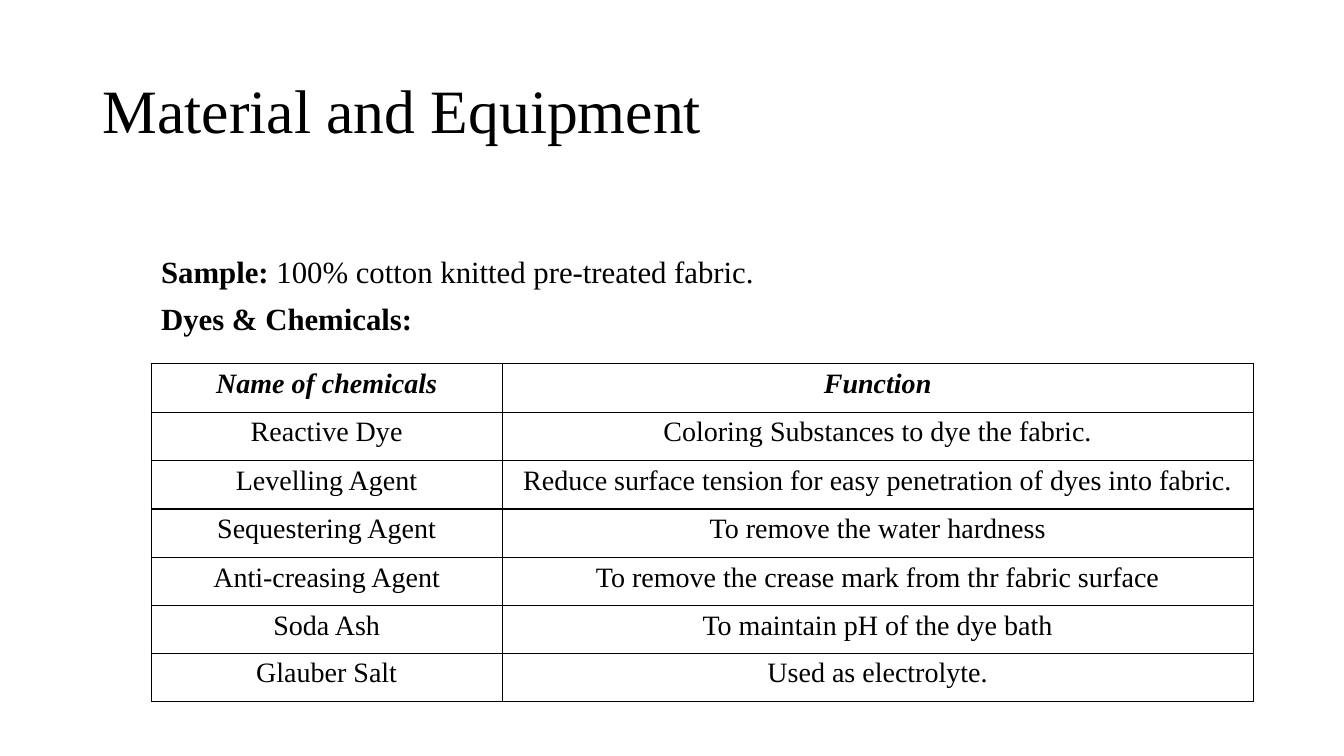
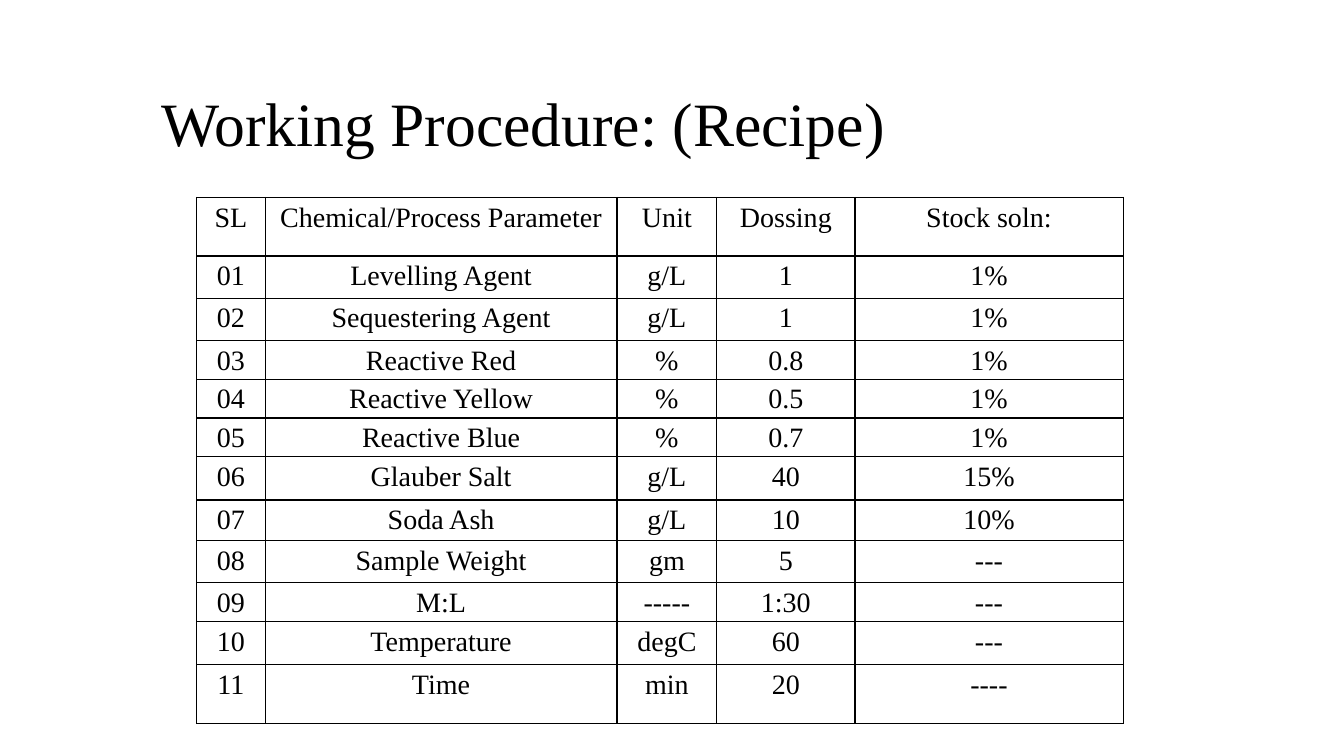
from dataclasses import dataclass

from lxml.etree import SubElement
from pptx import Presentation
from pptx.dml.color import RGBColor
from pptx.enum.text import MSO_ANCHOR, PP_ALIGN
from pptx.oxml.ns import qn
from pptx.util import Inches, Pt


@dataclass(frozen=True)
class Theme:
    font: str = "Times New Roman"
    ink: str = "000000"
    paper: str = "FFFFFF"
    title: int = 44
    body: int = 22
    cell: int = 20
    rule: int = 1
    tight: float = 0.9
    loose: float = 1.15
    pad: float = 0.07


THEME = Theme()

CHEMICALS = [
    ("Name of chemicals", "Function"),
    ("Reactive Dye", "Coloring Substances to dye the fabric."),
    ("Levelling Agent",
     "Reduce surface tension for easy penetration of dyes into fabric."),
    ("Sequestering Agent", "To remove the water hardness"),
    ("Anti-creasing Agent",
     "To remove the crease mark from thr fabric surface"),
    ("Soda Ash", "To maintain pH of the dye bath"),
    ("Glauber Salt", "Used as electrolyte."),
]

HEADS = ("SL", "Chemical/Process Parameter", "Unit", "Dossing", "Stock soln:")
RECIPE = [
    ("Levelling Agent", "g/L", "1", "1%"),
    ("Sequestering Agent", "g/L", "1", "1%"),
    ("Reactive Red", "%", "0.8", "1%"),
    ("Reactive Yellow", "%", "0.5", "1%"),
    ("Reactive Blue", "%", "0.7", "1%"),
    ("Glauber Salt", "g/L", "40", "15%"),
    ("Soda Ash", "g/L", "10", "10%"),
    ("Sample Weight", "gm", "5", "---"),
    ("M:L", "-----", "1:30", "---"),
    ("Temperature", "degC", "60", "---"),
    ("Time", "min", "20", "----"),
]


def write(para, text, size=THEME.body, bold=False, italic=False,
          align=PP_ALIGN.LEFT, line=THEME.tight, before=0):
    """Add one run of text to a paragraph and set its format."""
    para.alignment = align
    para.line_spacing = line
    para.space_before = Pt(before)
    run = para.add_run()
    run.text = text
    font = run.font
    font.name, font.size = THEME.font, Pt(size)
    font.bold, font.italic = bold, italic
    font.color.rgb = RGBColor.from_string(THEME.ink)


def add_frame(slide, box, anchor=MSO_ANCHOR.TOP):
    frame = slide.shapes.add_textbox(*map(Inches, box)).text_frame
    frame.word_wrap = True
    frame.vertical_anchor = anchor
    return frame


def add_title(slide, box, text):
    frame = add_frame(slide, box, MSO_ANCHOR.MIDDLE)
    write(frame.paragraphs[0], text, size=THEME.title)


def add_notes(slide, box, notes):
    """Place lines made of a bold label and plain text."""
    frame = add_frame(slide, box)
    for i, (label, text) in enumerate(notes):
        para = frame.add_paragraph() if i else frame.paragraphs[0]
        write(para, label, bold=True, before=10)
        if text:
            write(para, text, before=10)


def rule_cell(cell):
    """Draw the four borders, which must come before the cell's fill."""
    props = cell._tc.get_or_add_tcPr()
    for side in ("lnL", "lnR", "lnT", "lnB"):
        edge = SubElement(props, qn(f"a:{side}"), w=str(Pt(THEME.rule)))
        fill = SubElement(edge, qn("a:solidFill"))
        SubElement(fill, qn("a:srgbClr"), val=THEME.ink)


def add_grid(slide, left, top, cols, rows, data, strong=False):
    """Place a ruled table; strong sets the head row in bold italic."""
    box = left, top, sum(cols), sum(rows)
    table = slide.shapes.add_table(
        len(rows), len(cols), *map(Inches, box)).table
    table.first_row = table.horz_banding = False
    for col, width in zip(table.columns, cols):
        col.width = Inches(width)
    for r, (row, height, texts) in enumerate(zip(table.rows, rows, data)):
        row.height = Inches(height)
        head = strong and r == 0
        for cell, text in zip(row.cells, texts):
            cell.margin_left = cell.margin_right = Inches(THEME.pad)
            cell.margin_top = cell.margin_bottom = 0
            rule_cell(cell)
            cell.fill.background()
            write(cell.text_frame.paragraphs[0], text, size=THEME.cell,
                  bold=head, italic=head, align=PP_ALIGN.CENTER,
                  line=THEME.loose)


def add_slide(deck):
    slide = deck.slides.add_slide(deck.slide_layouts[6])
    fill = slide.background.fill
    fill.solid()
    fill.fore_color.rgb = RGBColor.from_string(THEME.paper)
    return slide


def add_supplies(deck):
    slide = add_slide(deck)
    add_title(slide, (0.92, 0.4, 11.5, 1.45), "Material and Equipment")
    add_notes(slide, (1.5, 2.5, 10.5, 1), [
        ("Sample:", " 100% cotton knitted pre-treated fabric."),
        ("Dyes & Chemicals:", ""),
    ])
    rows = [0.48] * 5 + [0.47, 0.48]
    add_grid(slide, 1.5, 3.61, (3.48, 7.45), rows, CHEMICALS, strong=True)


def add_recipe(deck):
    slide = add_slide(deck)
    add_title(slide, (1.5, 0.75, 10.5, 1.02), "Working Procedure: (Recipe)")
    cols = 0.68, 3.49, 0.99, 1.37, 2.66
    rows = (0.58, 0.42, 0.42, 0.36, 0.36, 0.36,
            0.43, 0.4, 0.42, 0.37, 0.43, 0.58)
    steps = [(f"{n:02}", *step) for n, step in enumerate(RECIPE, 1)]
    add_grid(slide, 1.95, 1.96, cols, rows, [HEADS, *steps])


def main():
    deck = Presentation()
    deck.slide_width, deck.slide_height = Inches(13.33), Inches(7.5)
    add_supplies(deck)
    add_recipe(deck)
    deck.save("out.pptx")


if __name__ == "__main__":
    main()
